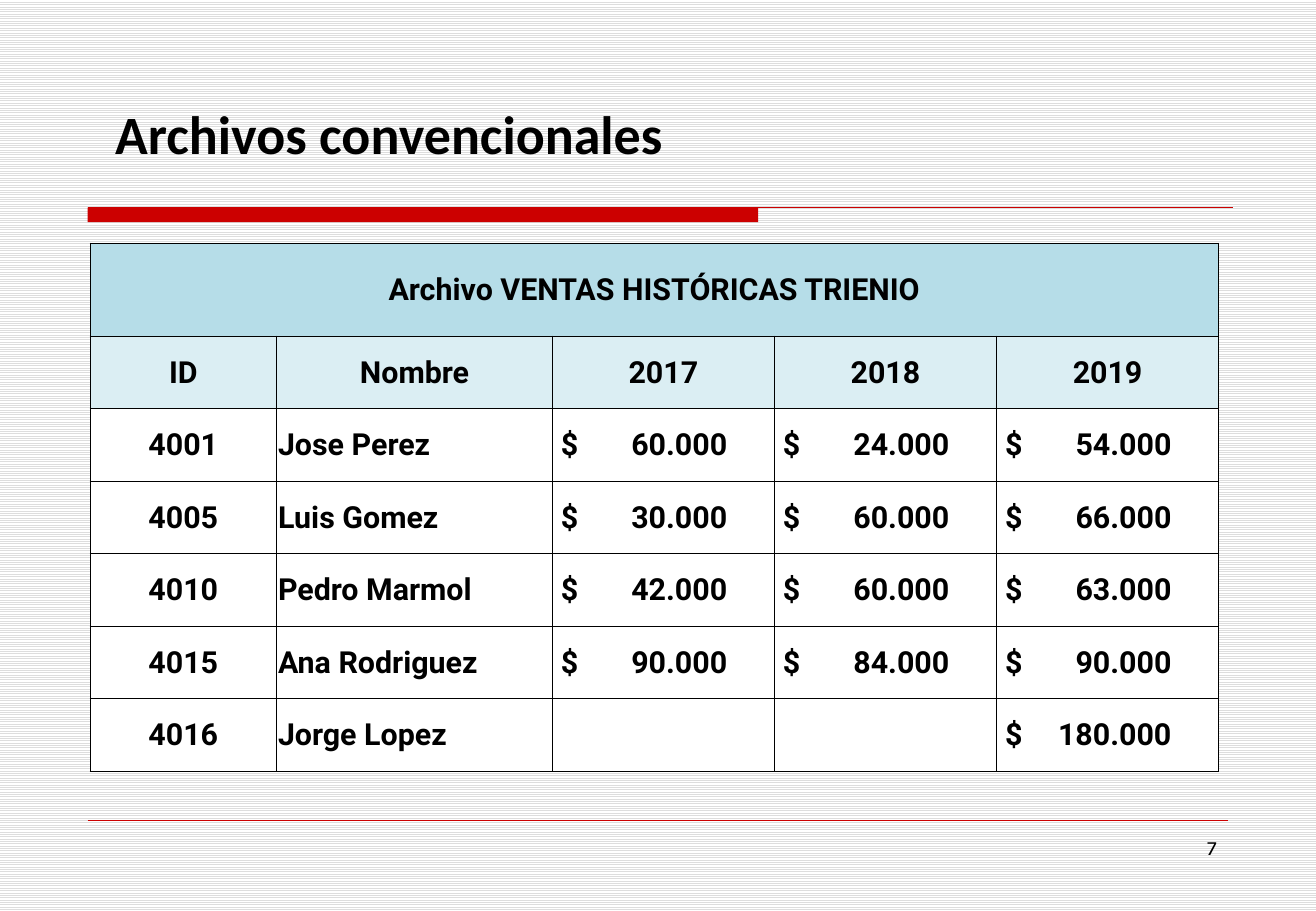
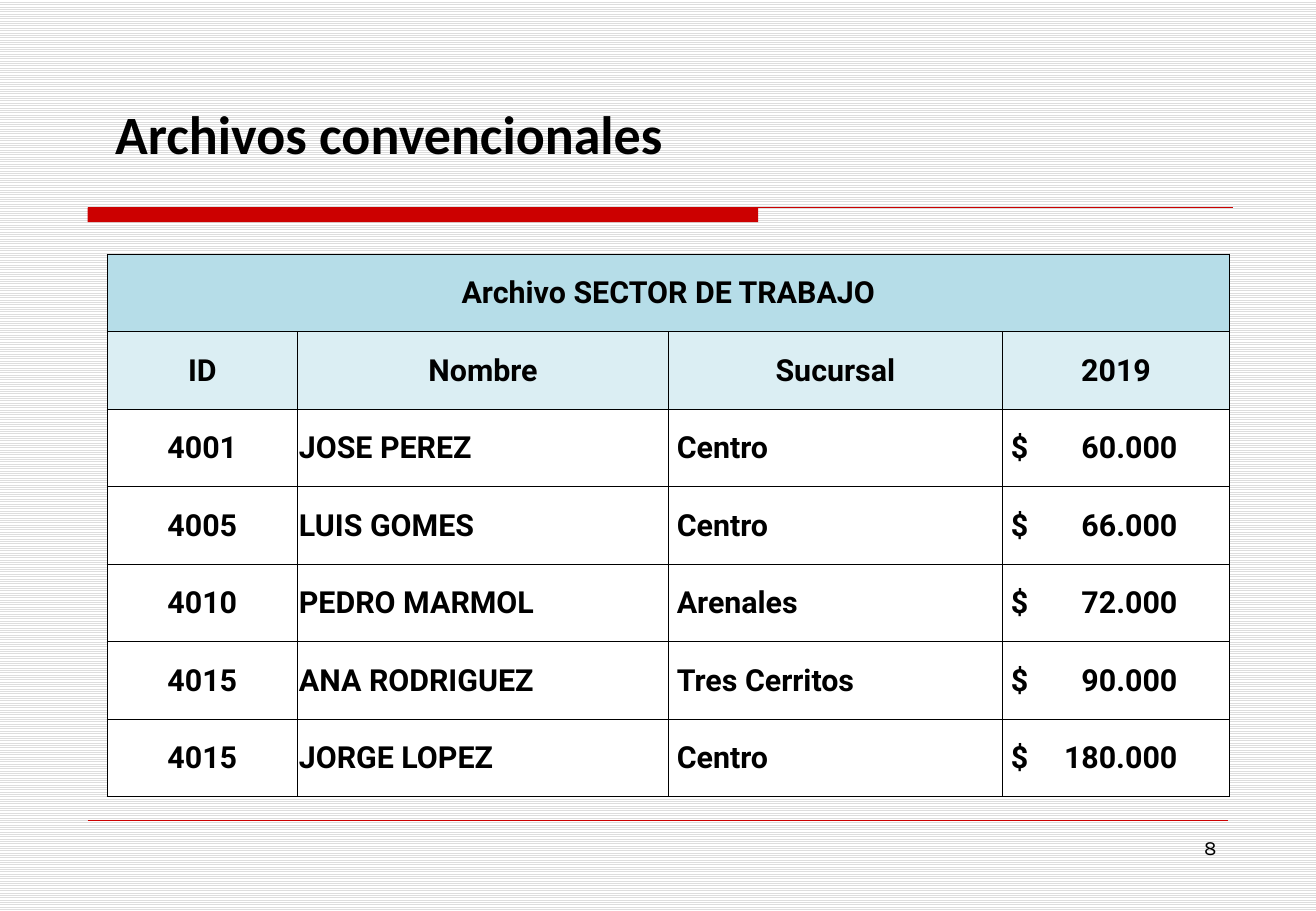
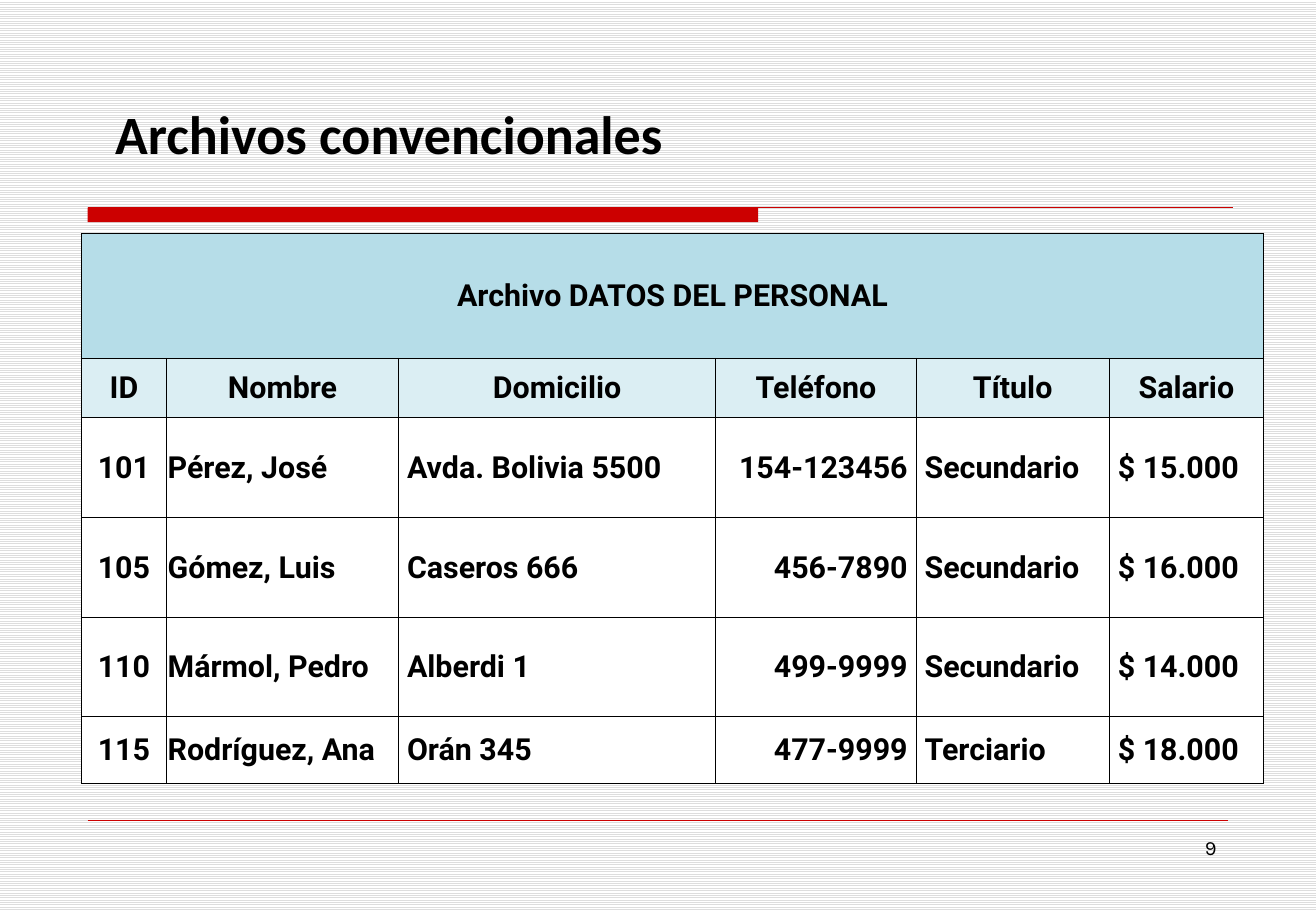
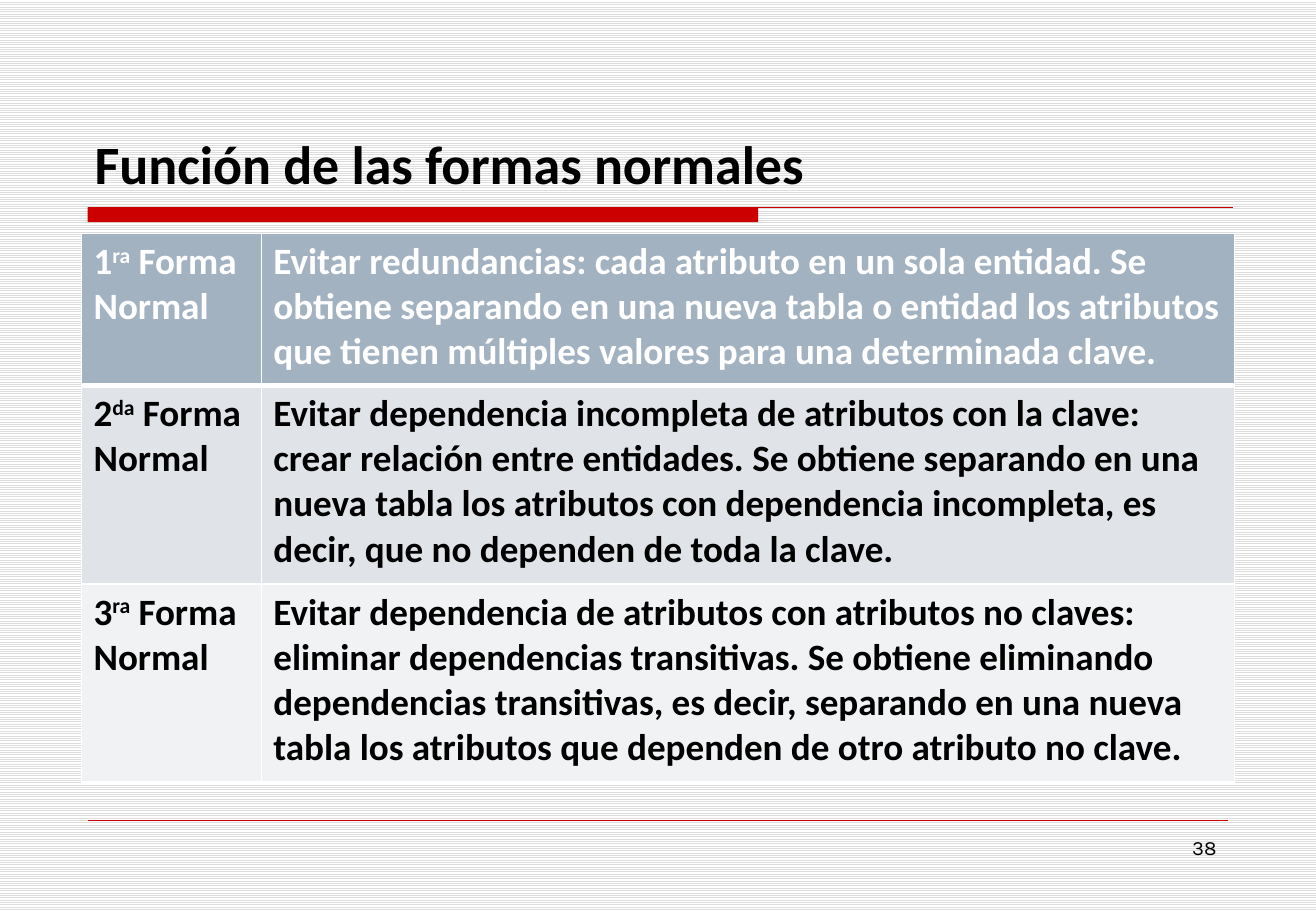
"""Builds four slides about conventional files and normal forms."""
from dataclasses import dataclass
from typing import Optional

from lxml import etree
from pptx import Presentation
from pptx.dml.color import RGBColor
from pptx.enum.dml import MSO_PATTERN
from pptx.enum.shapes import MSO_CONNECTOR, MSO_SHAPE
from pptx.enum.text import MSO_ANCHOR, PP_ALIGN
from pptx.oxml.ns import qn
from pptx.presentation import Presentation as Deck
from pptx.slide import Slide
from pptx.table import Table, _Cell
from pptx.text.text import _Paragraph, _Run
from pptx.util import Emu, Inches, Pt

STRAIGHT = MSO_CONNECTOR.STRAIGHT
RECTANGLE = MSO_SHAPE.RECTANGLE
LIGHT_HORIZONTAL = MSO_PATTERN.LIGHT_HORIZONTAL
TOP, MIDDLE, BOTTOM = MSO_ANCHOR.TOP, MSO_ANCHOR.MIDDLE, MSO_ANCHOR.BOTTOM
LEFT, CENTER, RIGHT = PP_ALIGN.LEFT, PP_ALIGN.CENTER, PP_ALIGN.RIGHT

SLIDE_WIDTH, SLIDE_HEIGHT = Inches(10.83), Inches(7.5)
EDGES = ("L", "R", "T", "B")


@dataclass(frozen=True)
class TextStyle:
    """Font, size, colour and weight of a text."""
    font: str
    size: float
    color: str = "000000"
    bold: bool = True


@dataclass(frozen=True)
class Theme:
    """Colours and type styles shared by the slides."""
    paper: str = "FFFFFF"
    stripe: str = "DDDDDD"
    accent: str = "CC0000"
    ink: str = "000000"
    caption_fill: str = "B6DDE8"
    header_fill: str = "DBEEF3"
    form_fills: tuple[str, ...] = ("A3B2C1", "E0E4E9", "F0F2F4")
    title: TextStyle = TextStyle("Calibri", 32)
    number: TextStyle = TextStyle("Karla", 12, bold=False)
    record: TextStyle = TextStyle("Roboto", 18)
    form_head: TextStyle = TextStyle("Calibri", 22, "FFFFFF")
    form_body: TextStyle = TextStyle("Calibri", 22)
    cell_inset: float = 0.01
    cell_pad: float = 0.07


THEME = Theme()


@dataclass(frozen=True)
class Area:
    """A rectangle in percent of the slide's width and height."""
    left: float
    top: float
    width: float
    height: float

    def box(self) -> tuple[Emu, Emu, Emu, Emu]:
        """Return left, top, width and height as lengths."""
        return across(self.left), down(self.top), across(self.width), down(self.height)


@dataclass(frozen=True)
class Column:
    """Heading, relative width and text placement of a column."""
    heading: str
    weight: float
    align: PP_ALIGN = LEFT
    padded: bool = False
    amount_stop: Optional[float] = None


@dataclass(frozen=True)
class FileTable:
    """A captioned file with its columns and records."""
    number: str
    caption: str
    area: Area
    columns: tuple[Column, ...]
    row_weights: tuple[float, ...]
    records: tuple[tuple[str, ...], ...]


@dataclass(frozen=True)
class NormalForm:
    """Ordinal and purpose of a normal form."""
    digit: str
    suffix: str
    purpose: str


BAND = Area(6.65, 22.8, 50.97, 1.6)
BAND_LINE_END = 93.72
FOOTER_TOP, FOOTER_END = 90, 93.35
NUMBER_AREA = Area(71.65, 91.07, 21.7, 6.93)
FILE_TITLE_AREA = Area(7.85, 10.4, 85.78, 15.07)
FORM_TITLE_AREA = Area(6.28, 4.4, 87.53, 17.73)
FORM_TABLE_AREA = Area(6.19, 25.6, 87.63, 60.27)
AMOUNT_STOP = 1.37

FILES = (
    FileTable(
        "7", "Archivo VENTAS HISTÓRICAS TRIENIO", Area(6.83, 26.67, 85.78, 58),
        (Column("ID", 1.54, CENTER), Column("Nombre", 2.27))
        + tuple(Column(year, 1.83, LEFT, True, AMOUNT_STOP) for year in ("2017", "2018", "2019")),
        (0.77,) + (0.6,) * 6,
        (
            ("4001", "Jose Perez", "$\t60.000", "$\t24.000", "$\t54.000"),
            ("4005", "Luis Gomez", "$\t30.000", "$\t60.000", "$\t66.000"),
            ("4010", "Pedro Marmol", "$\t42.000", "$\t60.000", "$\t63.000"),
            ("4015", "Ana Rodriguez", "$\t90.000", "$\t84.000", "$\t90.000"),
            ("4016", "Jorge Lopez", "", "", "$\t180.000"),
        ),
    ),
    FileTable(
        "8", "Archivo SECTOR DE TRABAJO", Area(8.13, 27.87, 85.32, 59.6),
        (
            Column("ID", 1.57, CENTER),
            Column("Nombre", 3.05),
            Column("Sucursal", 2.75, LEFT, True),
            Column("2019", 1.87, LEFT, True, AMOUNT_STOP),
        ),
        (1,) * 7,
        (
            ("4001", "JOSE PEREZ", "Centro", "$\t60.000"),
            ("4005", "LUIS GOMES", "Centro", "$\t66.000"),
            ("4010", "PEDRO MARMOL", "Arenales", "$\t72.000"),
            ("4015", "ANA RODRIGUEZ", "Tres Cerritos", "$\t90.000"),
            ("4015", "JORGE LOPEZ", "Centro", "$\t180.000"),
        ),
    ),
    FileTable(
        "9", "Archivo DATOS DEL PERSONAL", Area(6.19, 25.6, 89.84, 60.4),
        (
            Column("ID", 0.7, CENTER),
            Column("Nombre", 1.91),
            Column("Domicilio", 2.61, LEFT, True),
            Column("Teléfono", 1.65, RIGHT, True),
            Column("Título", 1.59, LEFT, True),
            Column("Salario", 1.27, LEFT, True),
        ),
        (1.03, 0.49, 0.82, 0.82, 0.82, 0.55),
        (
            ("101", "Pérez, José", "Avda. Bolivia 5500", "154-123456", "Secundario", "$ 15.000"),
            ("105", "Gómez, Luis", "Caseros 666", "456-7890", "Secundario", "$ 16.000"),
            ("110", "Mármol, Pedro", "Alberdi 1", "499-9999", "Secundario", "$ 14.000"),
            ("115", "Rodríguez, Ana", "Orán 345", "477-9999", "Terciario", "$ 18.000"),
        ),
    ),
)

NORMAL_FORMS = (
    NormalForm(
        "1", "ra",
        "Evitar redundancias: cada atributo en un sola entidad. Se obtiene separando en una "
        "nueva tabla o entidad los atributos que tienen múltiples valores para una determinada clave.",
    ),
    NormalForm(
        "2", "da",
        "Evitar dependencia incompleta de atributos con la clave: crear relación entre entidades. "
        "Se obtiene separando en una nueva tabla los atributos con dependencia incompleta, es decir, "
        "que no dependen de toda la clave.",
    ),
    NormalForm(
        "3", "ra",
        "Evitar dependencia de atributos con atributos no claves: eliminar dependencias transitivas. "
        "Se obtiene eliminando dependencias transitivas, es decir, separando en una nueva tabla los "
        "atributos que dependen de otro atributo no clave.",
    ),
)


def across(percent: float) -> Emu:
    """Turn a percentage of the slide's width into a length."""
    return Emu(round(SLIDE_WIDTH * percent / 100))


def down(percent: float) -> Emu:
    """Turn a percentage of the slide's height into a length."""
    return Emu(round(SLIDE_HEIGHT * percent / 100))


def format_run(run: _Run, style: TextStyle) -> None:
    """Apply a text style to a run."""
    run.font.name = style.font
    run.font.size = Pt(style.size)
    run.font.bold = style.bold
    run.font.color.rgb = RGBColor.from_string(style.color)


def write(paragraph: _Paragraph, text: str, style: TextStyle, align: PP_ALIGN = LEFT) -> None:
    """Fill a paragraph with styled text."""
    paragraph.text = text
    paragraph.alignment = align
    for run in paragraph.runs:
        format_run(run, style)


def add_label(slide: Slide, area: Area, text: str, style: TextStyle,
              anchor: MSO_ANCHOR = TOP, align: PP_ALIGN = LEFT) -> None:
    """Add a wrapped text box."""
    frame = slide.shapes.add_textbox(*area.box()).text_frame
    frame.word_wrap = True
    frame.vertical_anchor = anchor
    write(frame.paragraphs[0], text, style, align)


def add_rule(slide: Slide, end: float, top: float, weight: float) -> None:
    """Add a horizontal accent line from the band's left edge."""
    rule = slide.shapes.add_connector(
        STRAIGHT, across(BAND.left), down(top), across(end), down(top))
    rule.line.color.rgb = RGBColor.from_string(THEME.accent)
    rule.line.width = Pt(weight)
    etree.SubElement(rule._element.spPr, qn("a:effectLst"))


def add_base(deck: Deck, number: str, title: str, title_area: Area, anchor: MSO_ANCHOR) -> Slide:
    """Add a slide with band, footer line, title and number."""
    slide = deck.slides.add_slide(deck.slide_layouts[6])
    band = slide.shapes.add_shape(RECTANGLE, *BAND.box())
    band.shadow.inherit = False
    band.fill.solid()
    band.fill.fore_color.rgb = RGBColor.from_string(THEME.accent)
    band.line.fill.background()
    add_rule(slide, BAND_LINE_END, BAND.top, 0.75)
    add_rule(slide, FOOTER_END, FOOTER_TOP, 0.25)
    add_label(slide, title_area, title, THEME.title, anchor)
    add_label(slide, NUMBER_AREA, number, THEME.number, align=RIGHT)
    return slide


def add_grid(slide: Slide, area: Area, column_weights: tuple[float, ...],
             row_weights: tuple[float, ...]) -> Table:
    """Add an unbanded table whose columns and rows share its area by weight."""
    left, top, width, height = area.box()
    table = slide.shapes.add_table(
        len(row_weights), len(column_weights), left, top, width, height).table
    table.first_row = table.horz_banding = False
    for column, weight in zip(table.columns, column_weights):
        column.width = Emu(round(width * weight / sum(column_weights)))
    for row, weight in zip(table.rows, row_weights):
        row.height = Emu(round(height * weight / sum(row_weights)))
    return table


def paint_cell(cell: _Cell, fill: str, border: str, weights: dict[str, float]) -> None:
    """Set a cell's borders and fill."""
    properties = cell._tc.get_or_add_tcPr()
    for edge in EDGES:
        line = etree.SubElement(properties, qn(f"a:ln{edge}"), w=str(Pt(weights[edge])))
        solid = etree.SubElement(line, qn("a:solidFill"))
        etree.SubElement(solid, qn("a:srgbClr"), val=border)
    cell.fill.solid()
    cell.fill.fore_color.rgb = RGBColor.from_string(fill)


def fill_file_cell(cell: _Cell, text: str, fill: str, align: PP_ALIGN = CENTER,
                   padded: bool = False, amount_stop: Optional[float] = None) -> None:
    """Paint and write one cell of a file table."""
    paint_cell(cell, fill, THEME.ink, dict.fromkeys(EDGES, 0.5))
    inset = Inches(THEME.cell_inset)
    side = Inches(THEME.cell_pad) if padded else inset
    cell.margin_left = cell.margin_right = side
    cell.margin_top, cell.margin_bottom = inset, 0
    cell.vertical_anchor = MIDDLE
    paragraph = cell.text_frame.paragraphs[0]
    write(paragraph, text, THEME.record, align)
    if amount_stop and text:
        stops = etree.SubElement(paragraph._p.get_or_add_pPr(), qn("a:tabLst"))
        etree.SubElement(stops, qn("a:tab"), pos=str(Inches(amount_stop)), algn="r")


def add_file_slide(deck: Deck, file: FileTable) -> None:
    """Add the slide of one conventional file."""
    slide = add_base(deck, file.number, "Archivos convencionales", FILE_TITLE_AREA, TOP)
    table = add_grid(slide, file.area, tuple(c.weight for c in file.columns), file.row_weights)
    table.cell(0, 0).merge(table.cell(0, len(file.columns) - 1))
    for index, column in enumerate(file.columns):
        caption = "" if index else file.caption
        fill_file_cell(table.cell(0, index), caption, THEME.caption_fill)
        fill_file_cell(table.cell(1, index), column.heading, THEME.header_fill)
        for row, record in enumerate(file.records, start=2):
            fill_file_cell(table.cell(row, index), record[index], THEME.paper,
                           column.align, column.padded, column.amount_stop)


def write_ordinal(paragraph: _Paragraph, form: NormalForm, style: TextStyle) -> None:
    """Write a form's name with its raised ordinal suffix."""
    for text in (form.digit, form.suffix, " Forma Normal"):
        run = paragraph.add_run()
        run.text = text
        format_run(run, style)
        if text == form.suffix:
            run._r.get_or_add_rPr().set("baseline", "30000")


def add_forms_slide(deck: Deck) -> None:
    """Add the slide on the purpose of the normal forms."""
    slide = add_base(deck, "38", "Función de las formas normales", FORM_TITLE_AREA, BOTTOM)
    table = add_grid(slide, FORM_TABLE_AREA, (1.48, 8.01), (1.25, 1.63, 1.63))
    for row, (form, fill) in enumerate(zip(NORMAL_FORMS, THEME.form_fills)):
        style = THEME.form_body if row else THEME.form_head
        weights = {"L": 1, "R": 1, "T": 3 if row == 1 else 1, "B": 1 if row else 3}
        name, purpose = table.cell(row, 0), table.cell(row, 1)
        for cell in (name, purpose):
            paint_cell(cell, fill, THEME.paper, weights)
        write_ordinal(name.text_frame.paragraphs[0], form, style)
        write(purpose.text_frame.paragraphs[0], form.purpose, style)


def main() -> None:
    """Build and save the presentation."""
    deck = Presentation()
    deck.slide_width, deck.slide_height = SLIDE_WIDTH, SLIDE_HEIGHT
    backdrop = deck.slide_master.background.fill
    backdrop.patterned()
    backdrop.pattern = LIGHT_HORIZONTAL
    backdrop.fore_color.rgb = RGBColor.from_string(THEME.stripe)
    backdrop.back_color.rgb = RGBColor.from_string(THEME.paper)
    for file in FILES:
        add_file_slide(deck, file)
    add_forms_slide(deck)
    deck.save("out.pptx")


if __name__ == "__main__":
    main()
